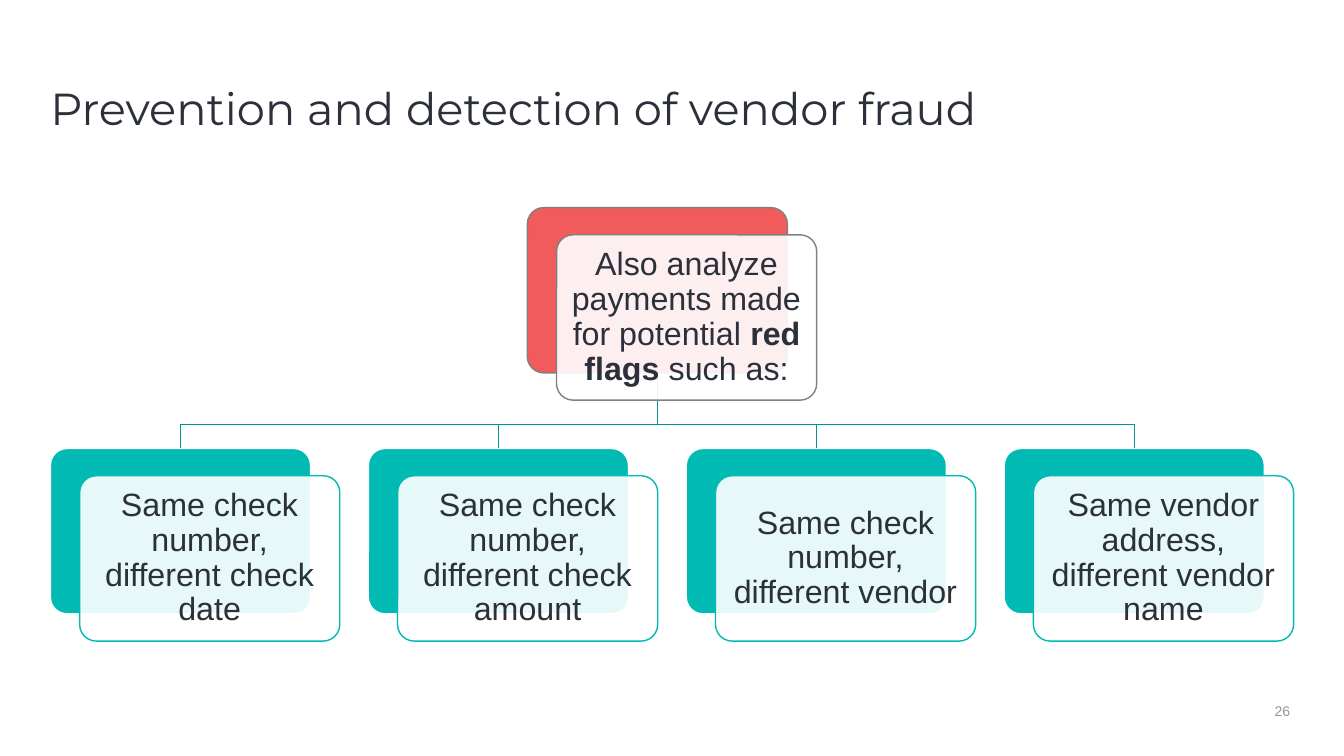
from pptx import Presentation
from lxml import etree
from pptx.dml.color import RGBColor
from pptx.enum.shapes import MSO_SHAPE as SHAPE
from pptx.enum.text import MSO_ANCHOR as ANCHOR, PP_ALIGN as ALIGN
from pptx.oxml.ns import qn
from pptx.util import Inches, Pt

INK, RED, GRAY, TEAL, LINE, WHITE = "2B303A", "F15B5C", "808080", "00BAB3", "00958F", "FFFFFF"
CARD_W, CARD_H = 2.58, 1.64
SHIFT_X, SHIFT_Y = 0.29, 0.27    # front card relative to back card
ROOT_X, ROOT_Y = 5.23, 2.06
ROW_X, ROW_Y, ROW_END = 0.5, 4.45, 9.96
BUS_Y = 4.21

ROOT = [("Also analyze payments made for potential ", False),
        ("red flags ", True), ("such as:", False)]
FLAGS = ["Same check number, different check date",
         "Same check number, different check amount",
         "Same check number, different vendor",
         "Same vendor address, different vendor name"]


def rgb(color):
    return RGBColor.from_string(color)


def write(tf, runs, size, font, color, align, spacing=1.0):
    tf.word_wrap = True
    p = tf.paragraphs[0]
    p.alignment, p.line_spacing = align, spacing
    for text, bold in runs:
        r = p.add_run()
        r.text = text
        r.font.size, r.font.name, r.font.bold = Pt(size), font, bold
        r.font.color.rgb = rgb(color)


def set_margins(tf, left, top, right, bottom):
    tf.margin_left, tf.margin_top = Inches(left), Inches(top)
    tf.margin_right, tf.margin_bottom = Inches(right), Inches(bottom)


def add_label(s, box, text, size, font, color, align, top=0, spacing=1.0):
    tf = s.shapes.add_textbox(*map(Inches, box)).text_frame
    set_margins(tf, 0, top, 0, 0)
    write(tf, [(text, False)], size, font, color, align, spacing)
    return tf


def add_branch(s, start_x, start_y, end_x, end_y):
    points = [(start_x, start_y), (start_x, BUS_Y), (end_x, BUS_Y), (end_x, end_y)]
    start, *rest = [(Inches(x), Inches(y)) for x, y in points]
    builder = s.shapes.build_freeform(*start)
    builder.add_line_segments(rest, close=False)
    sp = builder.convert_to_shape()
    sp.shadow.inherit = False
    sp.fill.background()
    sp.line.color.rgb = rgb(LINE)
    sp.line.width = Pt(1)


def add_card(s, x, y, fill, outline):
    sp = s.shapes.add_shape(SHAPE.ROUNDED_RECTANGLE,
                            *map(Inches, (x, y, CARD_W, CARD_H)))
    sp.adjustments[0] = 0.1
    sp.shadow.inherit = False
    sp.fill.solid()
    sp.fill.fore_color.rgb = rgb(fill)
    sp.line.color.rgb = rgb(outline)
    sp.line.width = Pt(1)
    return sp


def add_node(s, x, y, runs, fill, back_line, front_line):
    add_card(s, x, y, fill, back_line)
    front = add_card(s, x + SHIFT_X, y + SHIFT_Y, WHITE, front_line)
    # Let the back card show through the front one
    clr = front._element.spPr.find(qn("a:solidFill")).find(qn("a:srgbClr"))
    etree.SubElement(clr, qn("a:alpha"), val="90000")
    tf = front.text_frame
    set_margins(tf, 0.1, 0.1, 0.1, 0.1)
    tf.vertical_anchor = ANCHOR.MIDDLE
    write(tf, runs, 23, "Arial", INK, ALIGN.CENTER, 0.9)


def add_tree(s):
    pitch = (ROW_END - ROW_X) / (len(FLAGS) - 1)
    lefts = [ROW_X + i * pitch for i in range(len(FLAGS))]
    # Branches, behind the cards
    for x in reversed(lefts):
        add_branch(s, ROOT_X + CARD_W / 2, ROOT_Y + CARD_H, x + CARD_W / 2, ROW_Y)
    # Root and its red flags
    add_node(s, ROOT_X, ROOT_Y, ROOT, RED, GRAY, GRAY)
    for x, flag in zip(lefts, FLAGS):
        add_node(s, x, ROW_Y, [(flag, False)], TEAL, WHITE, TEAL)


def main():
    prs = Presentation()
    prs.slide_width, prs.slide_height = Inches(13.33), Inches(7.5)
    s = prs.slides.add_slide(prs.slide_layouts[6])
    # Title
    add_label(s, (0.5, 0.76, 12.33, 0.59), "Prevention and detection of vendor fraud",
              32, "Montserrat", INK, ALIGN.LEFT, top=0.1, spacing=0.9)
    add_tree(s)
    # Page number
    number = add_label(s, (12.52, 6.97, 0.4, 0.17), "26", 10, "Arial", "979797",
                       ALIGN.CENTER)
    number.vertical_anchor = ANCHOR.MIDDLE
    prs.save("out.pptx")


if __name__ == "__main__":
    main()
